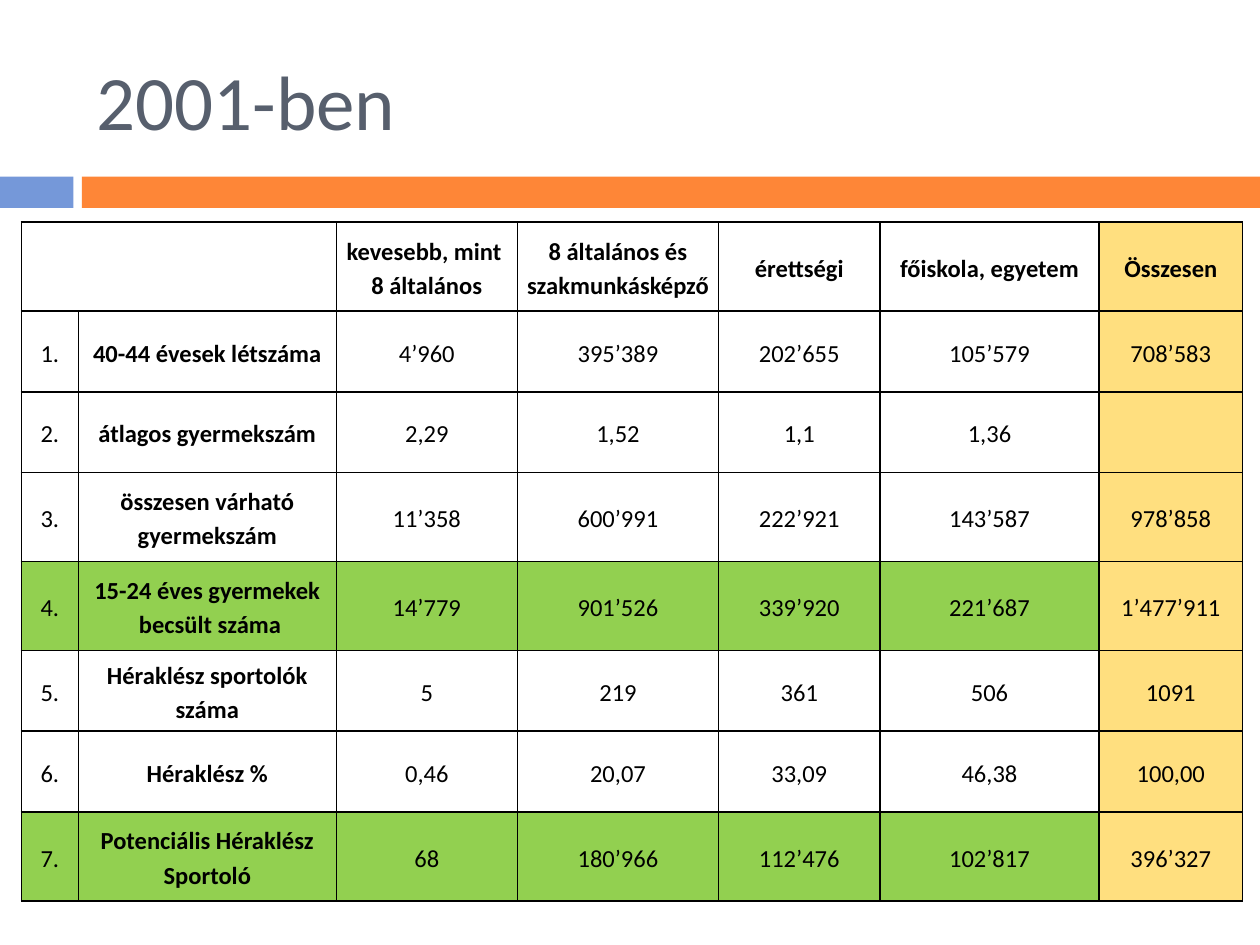
from lxml import etree
from pptx import Presentation
from pptx.dml.color import RGBColor
from pptx.enum import shapes, text
from pptx.oxml import ns
from pptx.util import Cm, Pt

BLACK = RGBColor(0x00, 0x00, 0x00)
SLATE = RGBColor(0x57, 0x5F, 0x6D)
BLUE = RGBColor(0x75, 0x98, 0xD9)
ORANGE = RGBColor(0xFE, 0x86, 0x37)
GOLD = RGBColor(0xFF, 0xC0, 0x00)
GREEN = RGBColor(0x92, 0xD0, 0x50)


def write(frame, words, size=14, color=BLACK, bold=False, align=None, lead=None, after=None):
    frame.text = words
    for par in frame.paragraphs:
        par.alignment = align
        par.line_spacing = lead
        par.space_after = after
        for run in par.runs:
            run.font.name = "Calibri"
            run.font.size = Pt(size)
            run.font.bold = bold
            run.font.color.rgb = color


def border(cell):
    props = cell._tc.get_or_add_tcPr()
    for side in ("a:lnL", "a:lnR", "a:lnT", "a:lnB"):
        line = etree.SubElement(props, ns.qn(side), w=str(Pt(1)))
        fill = etree.SubElement(line, ns.qn("a:solidFill"))
        etree.SubElement(fill, ns.qn("a:srgbClr"), val=str(BLACK))


deck = Presentation()
deck.slide_width = Cm(25.4)
deck.slide_height = Cm(19.05)
slide = deck.slides.add_slide(deck.slide_layouts[6])

for left, width, color in ((0, 1.48, BLUE), (1.65, 23.75, ORANGE)):
    bar = slide.shapes.add_shape(
        shapes.MSO_SHAPE.RECTANGLE, Cm(left), Cm(3.56), Cm(width), Cm(0.63))
    bar.shadow.inherit = False
    bar.fill.solid()
    bar.fill.fore_color.rgb = color
    bar.line.fill.background()

title = slide.shapes.add_textbox(Cm(1.7), Cm(0.64), Cm(22.66), Cm(2.74)).text_frame
title.word_wrap = True
title.vertical_anchor = text.MSO_ANCHOR.MIDDLE
write(title, "2001-ben", size=44, color=SLATE)

rows = [
    ("", "", "kevesebb, mint \n8 általános", "8 általános és szakmunkásképző",
     "érettségi", "főiskola, egyetem", "Összesen"),
    ("1.", "40-44 évesek létszáma", "4’960", "395’389", "202’655", "105’579", "708’583"),
    ("2.", "átlagos gyermekszám", "2,29", "1,52", "1,1", "1,36", ""),
    ("3.", "összesen várható gyermekszám", "11’358", "600’991", "222’921", "143’587", "978’858"),
    ("4.", "15-24 éves gyermekek\v becsült száma", "14’779", "901’526", "339’920", "221’687",
     "1’477’911"),
    ("5.", "Héraklész sportolók száma", "5", "219", "361", "506", "1091"),
    ("6.", "Héraklész %", "0,46", "20,07", "33,09", "46,38", "100,00"),
    ("7.", "Potenciális Héraklész Sportoló", "68", "180’966", "112’476", "102’817", "396’327"),
]
wide = (1.15, 5.2, 3.65, 4.06, 3.25, 4.42, 2.89)
high = (1.79, 1.63, 1.63, 1.79, 1.79, 1.63, 1.63, 1.79)

table = slide.shapes.add_table(
    len(rows), len(wide), Cm(0.43), Cm(4.48), Cm(sum(wide)), Cm(sum(high))).table
table.first_row = False
table.horz_banding = False
for col, width in zip(table.columns, wide):
    col.width = Cm(width)
for row, height in zip(table.rows, high):
    row.height = Cm(height)

last = len(wide) - 1
for r, row in enumerate(rows):
    for c, words in enumerate(row):
        cell = table.cell(r, c)
        cell.margin_left = cell.margin_right = Cm(0.1)
        cell.margin_top = cell.margin_bottom = 0
        cell.vertical_anchor = text.MSO_ANCHOR.MIDDLE
        green = r in (4, 7)
        write(cell.text_frame, words, bold=r == 0 or c == 1, align=text.PP_ALIGN.CENTER,
              lead=1.15, after=Pt(10) if green and c > 1 else None)
        border(cell)
        if c == last:
            cell.fill.solid()
            cell.fill.fore_color.rgb = GOLD
            tint = cell._tc.tcPr.find(ns.qn("a:solidFill"))[0]
            etree.SubElement(tint, ns.qn("a:alpha"), val="50000")
        elif green:
            cell.fill.solid()
            cell.fill.fore_color.rgb = GREEN
        else:
            cell.fill.background()
table.cell(0, 0).merge(table.cell(0, 1))

deck.save("out.pptx")
